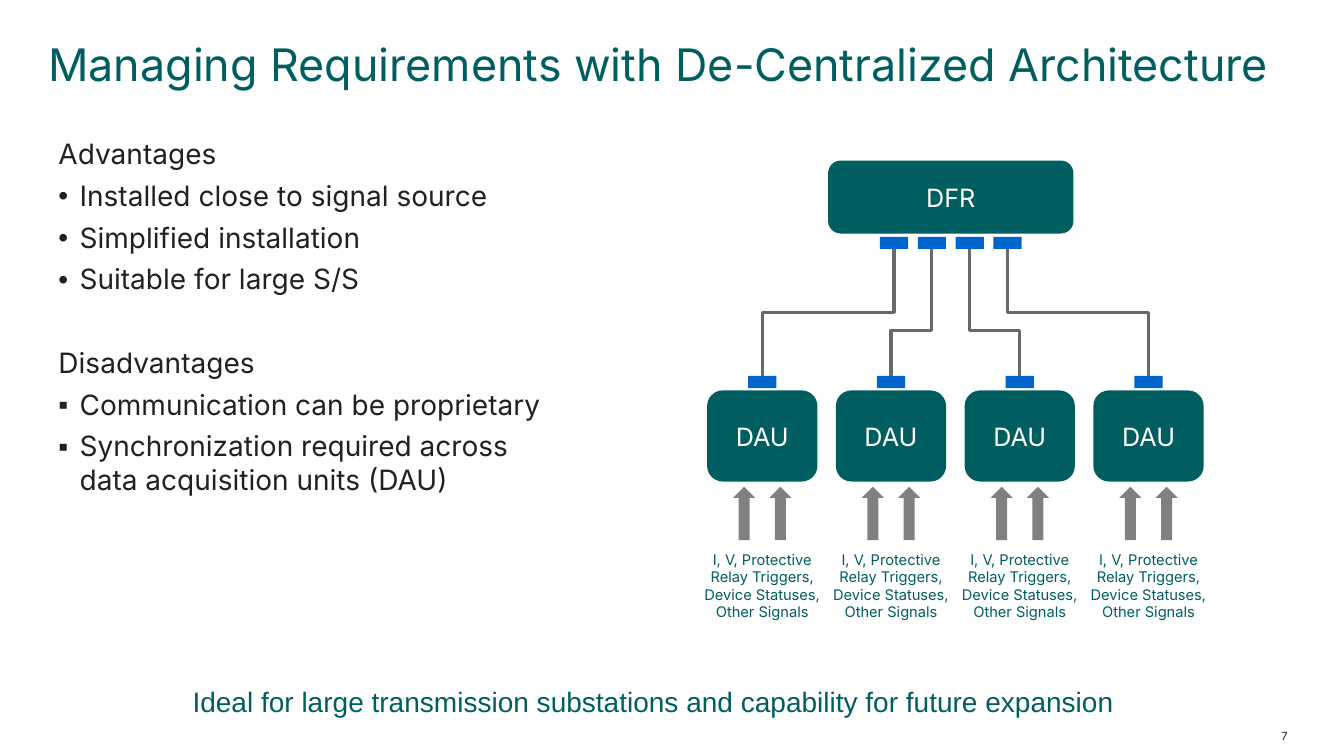
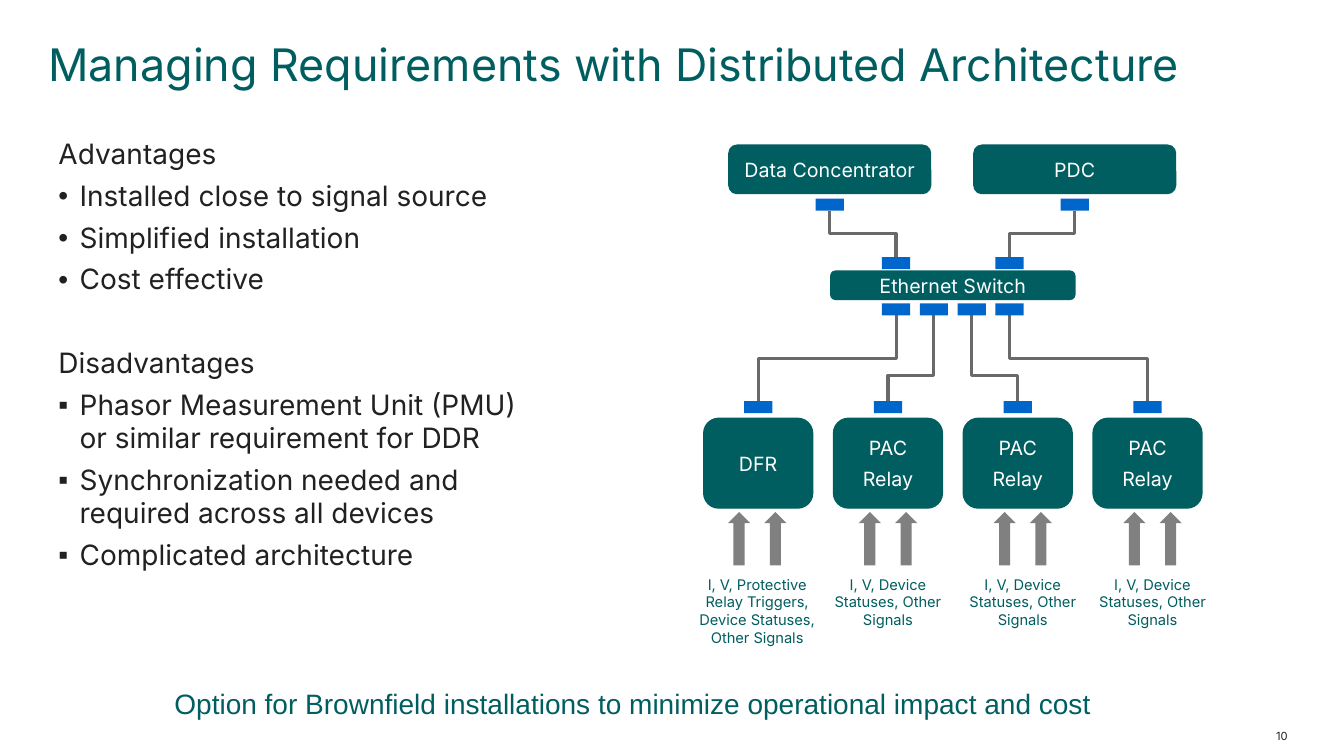
from dataclasses import dataclass

from lxml import etree
from pptx import Presentation
from pptx.dml.color import RGBColor
from pptx.enum.shapes import MSO_CONNECTOR, MSO_SHAPE
from pptx.enum.text import MSO_ANCHOR, MSO_AUTO_SIZE, PP_ALIGN
from pptx.oxml.ns import qn
from pptx.util import Inches, Pt

ELBOW = MSO_CONNECTOR.ELBOW
RECT, ROUND, ARROW = MSO_SHAPE.RECTANGLE, MSO_SHAPE.ROUNDED_RECTANGLE, MSO_SHAPE.UP_ARROW
TOP, MIDDLE, BOTTOM = MSO_ANCHOR.TOP, MSO_ANCHOR.MIDDLE, MSO_ANCHOR.BOTTOM
LEFT, CENTER, RIGHT = PP_ALIGN.LEFT, PP_ALIGN.CENTER, PP_ALIGN.RIGHT
NO_FIT = MSO_AUTO_SIZE.NONE

ALL = "I, V, Protective Relay Triggers, Device Statuses, Other Signals"
SOME = "I, V, Device Statuses, Other Signals"

SLIDES = [
    dict(
        title="Managing Requirements with De-Centralized Architecture",
        number="7",
        pros=["Installed close to signal source", "Simplified installation",
              "Suitable for large S/S"],
        cons=["Communication can be proprietary",
              "Synchronization required across data acquisition units (DAU)"],
        list_width=5.13,
        closing=("Ideal for large transmission substations and capability for future expansion",
                 1.91, 6.68),
        heads=[],
        hub=("DFR", 9.43, 1.6, 0.71),
        # name, signals, shift of the signals against the unit
        units=[(["DAU"], ALL, 0)] * 4,
        first=7.56, pitch=1.277, row=3.73, drop=0.15, bend=0.64, size=18,
    ),
    dict(
        title="Managing Requirements with Distributed Architecture",
        number="10",
        pros=["Installed close to signal source", "Simplified installation",
              "Cost effective"],
        cons=["Phasor Measurement Unit (PMU) or similar requirement for DDR",
              "Synchronization needed and required across all devices",
              "Complicated architecture"],
        list_width=4.83,
        closing=("Option for Brownfield installations to minimize operational impact and cost",
                 1.73, 6.7),
        heads=[("Data Concentrator", 8.23), ("PDC", 10.66)],
        hub=("Ethernet Switch", 9.45, 2.69, 0.28),
        units=[(["DFR"], ALL, -0.01), (["PAC", "Relay"], SOME, 0),
               (["PAC", "Relay"], SOME, 0.05), (["PAC", "Relay"], SOME, 0.05)],
        first=7.52, pitch=1.287, row=3.98, drop=0.17, bend=0.7, size=14,
    ),
]


@dataclass(frozen=True)
class Theme:
    teal: str = "005E60"
    blue: str = "0066CC"
    wire: str = "696969"
    gray: str = "808080"
    ink: str = "212121"
    white: str = "FFFFFF"
    font: str = "Inter"
    plain: str = "Arial"
    title: float = 32
    body: float = 20
    note: float = 10.5
    foot: float = 8


LOOK = Theme()
WIDE, HIGH = 13.33, 7.5
PORT_W, PORT_H, PORT_GAP = 0.28, 0.12, 0.375
HUB_W = 2.42
HEAD_W, HEAD_H, HEAD_Y = 2, 0.48, 1.44
UNIT_W, UNIT_H = 1.08, 0.89
ARROW_W, ARROW_H, ARROW_GAP = 0.22, 0.53, 0.36
NOTE_W, NOTE_H = 1.19, 0.81
HANG = 0.21


def color(code):
    return RGBColor.from_string(code)


def place(shape, left, top, width, height):
    shape.left, shape.top = Inches(left), Inches(top)
    shape.width, shape.height = Inches(width), Inches(height)


def setup(frame, anchor, inset=True):
    frame.word_wrap, frame.auto_size = True, NO_FIT
    frame.vertical_anchor = anchor
    if not inset:
        frame.margin_left = frame.margin_top = frame.margin_right = frame.margin_bottom = 0


def write(frame, lines, size, ink, align=LEFT, font=LOOK.font, space=1.0, after=0):
    frame.text = "\n".join(lines)
    for par in frame.paragraphs:
        par.alignment, par.line_spacing = align, space
        par.space_before, par.space_after = Pt(0), Pt(after)
        par.font.name, par.font.size = font, Pt(size)
        par.font.color.rgb = color(ink)


def label(slide, box, text, size, ink, anchor=TOP, inset=False, **style):
    frame = slide.shapes.add_textbox(*map(Inches, box)).text_frame
    setup(frame, anchor, inset)
    write(frame, [text], size, ink, **style)


def block(slide, kind, mid, top, width, height, fill):
    """Add a plain shape centred on the line x = mid."""
    shape = slide.shapes.add_shape(
        kind, *map(Inches, (mid - width / 2, top, width, height)))
    shape.shadow.inherit = False
    shape.fill.solid()
    shape.fill.fore_color.rgb = color(fill)
    shape.line.fill.background()
    return shape


def node(slide, lines, mid, top, width, height, size):
    shape = block(slide, ROUND, mid, top, width, height, LOOK.teal)
    shape.line.color.rgb, shape.line.width = color(LOOK.teal), Pt(1)
    setup(shape.text_frame, MIDDLE)
    write(shape.text_frame, lines, size, LOOK.white, CENTER, after=6)


def port(slide, mid, top):
    block(slide, RECT, mid, top, PORT_W, PORT_H, LOOK.blue)


def link(slide, x1, y1, x2, y2, bend=0.5):
    """Join two ports by an elbow that leaves and arrives vertically."""
    mid_x, mid_y = (x1 + x2) / 2, (y1 + y2) / 2
    half_w, half_h = (y2 - y1) / 2, abs(x2 - x1) / 2
    side = 1 if x2 < x1 else -1
    line = slide.shapes.add_connector(ELBOW, *map(Inches, (
        mid_x - side * half_w, mid_y - half_h, mid_x + side * half_w, mid_y + half_h)))
    line.line.color.rgb, line.line.width = color(LOOK.wire), Pt(2.25)
    props = line._element.spPr
    props.find(qn("a:xfrm")).set("rot", str((90 if side > 0 else 270) * 60000))
    guides = props.find(qn("a:prstGeom")).find(qn("a:avLst"))
    etree.SubElement(guides, qn("a:gd"), name="adj1", fmla=f"val {round(bend * 100000)}")
    etree.SubElement(props, qn("a:effectLst"))


def bullet(par, mark):
    props = par._p.get_or_add_pPr()
    hang = Inches(HANG) if mark else 0
    props.set("marL", str(hang))
    props.set("indent", str(-hang))
    if mark:
        etree.SubElement(props, qn("a:buFont"), typeface=LOOK.plain)
        etree.SubElement(props, qn("a:buChar"), char=mark)
    else:
        etree.SubElement(props, qn("a:buNone"))


def points(frame, pros, cons):
    rows = [("Advantages", None), *((text, "•") for text in pros),
            ("Disadvantages", None), *((text, "▪") for text in cons)]
    setup(frame, TOP)
    write(frame, [text for text, _ in rows], LOOK.body, LOOK.ink, space=0.99, after=6)
    frame.paragraphs[len(pros) + 1].space_before = Pt(30)
    for par, (_, mark) in zip(frame.paragraphs, rows):
        bullet(par, mark)


def words(slide, page):
    """Fill in the title, list, closing line and slide number."""
    title, body = slide.shapes.title, slide.placeholders[1]
    place(title, 0.48, -0.09, 12.29, 1)
    setup(title.text_frame, BOTTOM, False)
    write(title.text_frame, [page["title"]], LOOK.title, LOOK.teal, space=0.9)
    place(body, 0.48, 1.32, page["list_width"], 4.87)
    points(body.text_frame, page["pros"], page["cons"])
    text, left, top = page["closing"]
    label(slide, (left, top, 11.43, 0.45), text, LOOK.body, LOOK.teal, BOTTOM,
          font=LOOK.plain, space=0.9)
    label(slide, (12.27, 7.1, 0.6, 0.4), page["number"], LOOK.foot, LOOK.ink,
          MIDDLE, True, align=RIGHT)


def signals(slide, mid, row, text):
    for side in (-0.5, 0.5):
        block(slide, ARROW, mid + side * ARROW_GAP, row + 1.1, ARROW_W, ARROW_H, LOOK.gray)
    label(slide, (mid - NOTE_W / 2, row + 1.73, NOTE_W, NOTE_H), text,
          LOOK.note, LOOK.teal, align=CENTER, after=6)


def diagram(slide, page):
    name, hub_x, hub_y, hub_h = page["hub"]
    row, size, bend = page["row"], page["size"], page["bend"]
    out_y = hub_y + hub_h + 0.04
    outs = [hub_x + (i - 1.5) * PORT_GAP for i in range(4)]
    mids = [page["first"] + i * page["pitch"] for i in range(4)]

    for out, mid, turn in zip(outs, mids, (0.5, bend, bend, 0.5)):
        link(slide, out, out_y + PORT_H, mid, row, turn)
        port(slide, out, out_y)
        port(slide, mid, row)
    for (text, mid), inlet in zip(page["heads"], (outs[0], outs[-1])):
        head_y, inlet_y = HEAD_Y + HEAD_H + 0.05, hub_y - 0.14
        link(slide, mid, head_y + PORT_H, inlet, inlet_y)
        port(slide, mid, head_y)
        port(slide, inlet, inlet_y)
        node(slide, [text], mid, HEAD_Y, HEAD_W, HEAD_H, size)
    node(slide, [name], hub_x, hub_y, HUB_W, hub_h, size)
    for mid, (lines, text, shift) in zip(mids, page["units"]):
        node(slide, lines, mid, row + page["drop"], UNIT_W, UNIT_H, size)
        signals(slide, mid + shift, row, text)


def main():
    deck = Presentation()
    deck.slide_width, deck.slide_height = Inches(WIDE), Inches(HIGH)
    for page in SLIDES:
        slide = deck.slides.add_slide(deck.slide_layouts[1])
        words(slide, page)
        diagram(slide, page)
    deck.save("out.pptx")


if __name__ == "__main__":
    main()
